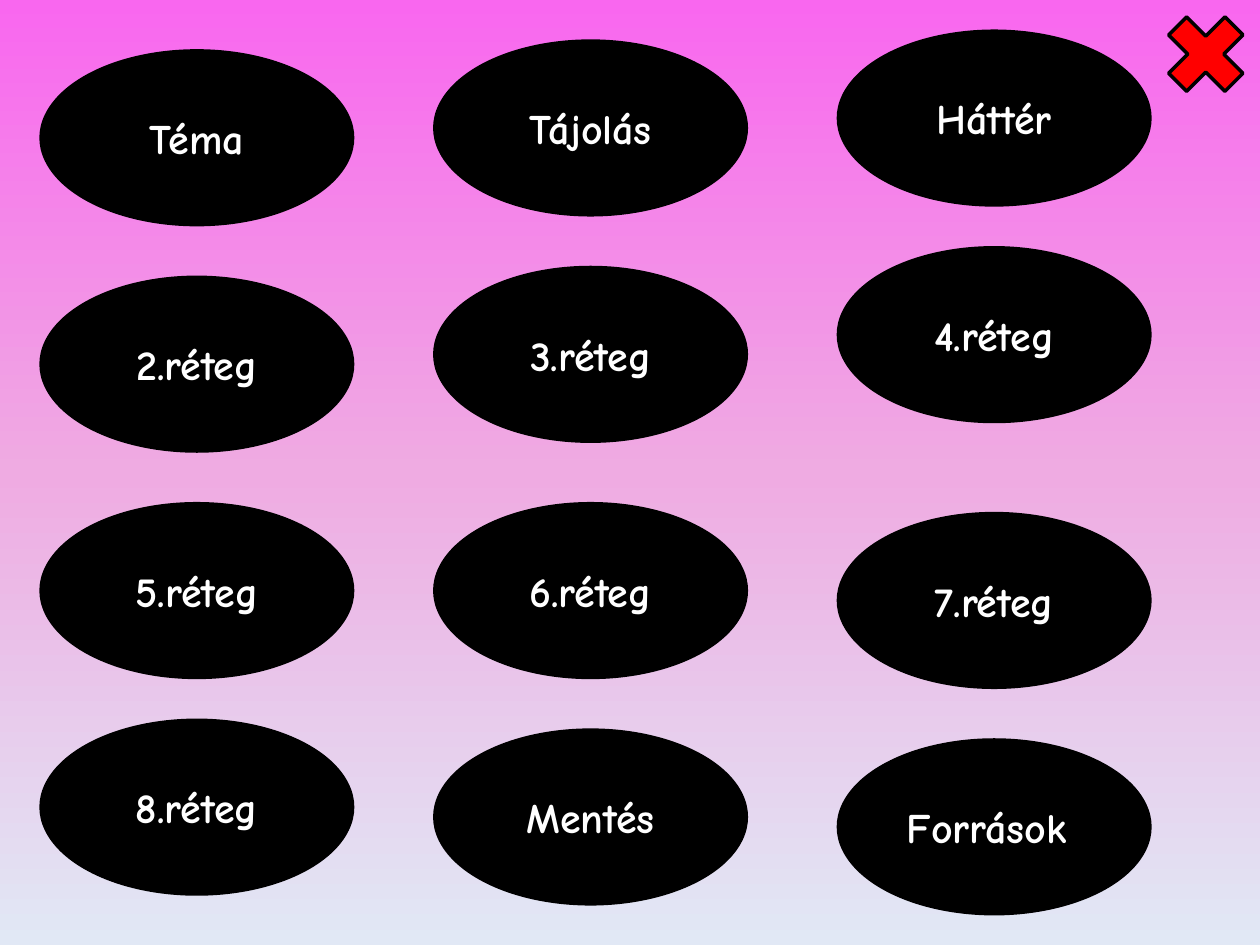
from copy import deepcopy

from lxml.etree import SubElement
from pptx import Presentation
from pptx.dml.color import RGBColor
from pptx.enum.shapes import MSO_SHAPE as Shape
from pptx.enum.text import MSO_ANCHOR as Anchor, PP_ALIGN as Align
from pptx.oxml.ns import qn
from pptx.util import Inches, Pt

WIDTH, HEIGHT = Inches(10), Inches(7.5)
COLS, ROWS = 128, 96
STOPS = [(0, "F967EF"), (0.5, "EFABE2"), (1, "E1E8F5")]
FONT = {"name": "Comic Neue", "size": Pt(24), "bold": True}
BUTTON_SIZE = (32, 18)
BUTTON_COLUMNS = [
    (4, [(5, "Téma"), (28, "2.réteg"), (51, "5.réteg"), (73, "8.réteg")]),
    (44, [(4, "Tájolás"), (27, "3.réteg"), (51, "6.réteg"), (74, "Mentés")]),
    (85, [(3, "Háttér"), (25, "4.réteg"), (52, "7.réteg"), (75, "Források ")]),
]


def color(value):
    return RGBColor.from_string(value)


def paint_background(s):
    fill = s.background.fill
    fill.gradient()
    fill.gradient_angle = 270
    stop_list = s.element.find(".//" + qn("a:gsLst"))
    stop_list.append(deepcopy(stop_list[-1]))
    for stop, (position, value) in zip(fill.gradient_stops, STOPS):
        stop.position = position
        stop.color.rgb = color(value)
    SubElement(stop_list[0][0], qn("a:alpha"), val="98000")


def add_cell_shape(s, kind, box, fill):
    x, y, w, h = box
    sp = s.shapes.add_shape(
        kind, WIDTH * x // COLS, HEIGHT * y // ROWS,
        WIDTH * w // COLS, HEIGHT * h // ROWS)
    sp.shadow.inherit = False
    sp.fill.solid()
    sp.fill.fore_color.rgb = color(fill)
    return sp


def add_button(s, box, text):
    sp = add_cell_shape(s, Shape.OVAL, box, "000000")
    sp.line.fill.background()
    tf = sp.text_frame
    tf.word_wrap = True
    tf.vertical_anchor = Anchor.MIDDLE
    p = tf.paragraphs[0]
    p.alignment = Align.CENTER
    r = p.add_run()
    r.text = text
    for name, value in FONT.items():
        setattr(r.font, name, value)
    r.font.color.rgb = color("FFFFFF")


def add_menu(s):
    for x, buttons in BUTTON_COLUMNS:
        for y, text in buttons:
            add_button(s, (x, y, *BUTTON_SIZE), text)


def add_close_mark(s, box):
    sp = add_cell_shape(s, Shape.MATH_MULTIPLY, box, "FF0000")
    sp.line.color.rgb = color("000000")
    sp.line.width = Pt(2)


def main():
    prs = Presentation()
    prs.slide_width, prs.slide_height = WIDTH, HEIGHT
    s = prs.slides.add_slide(prs.slide_layouts[6])
    paint_background(s)
    add_menu(s)
    add_close_mark(s, (117, 0, 11, 11))
    prs.save("out.pptx")


if __name__ == "__main__":
    main()
